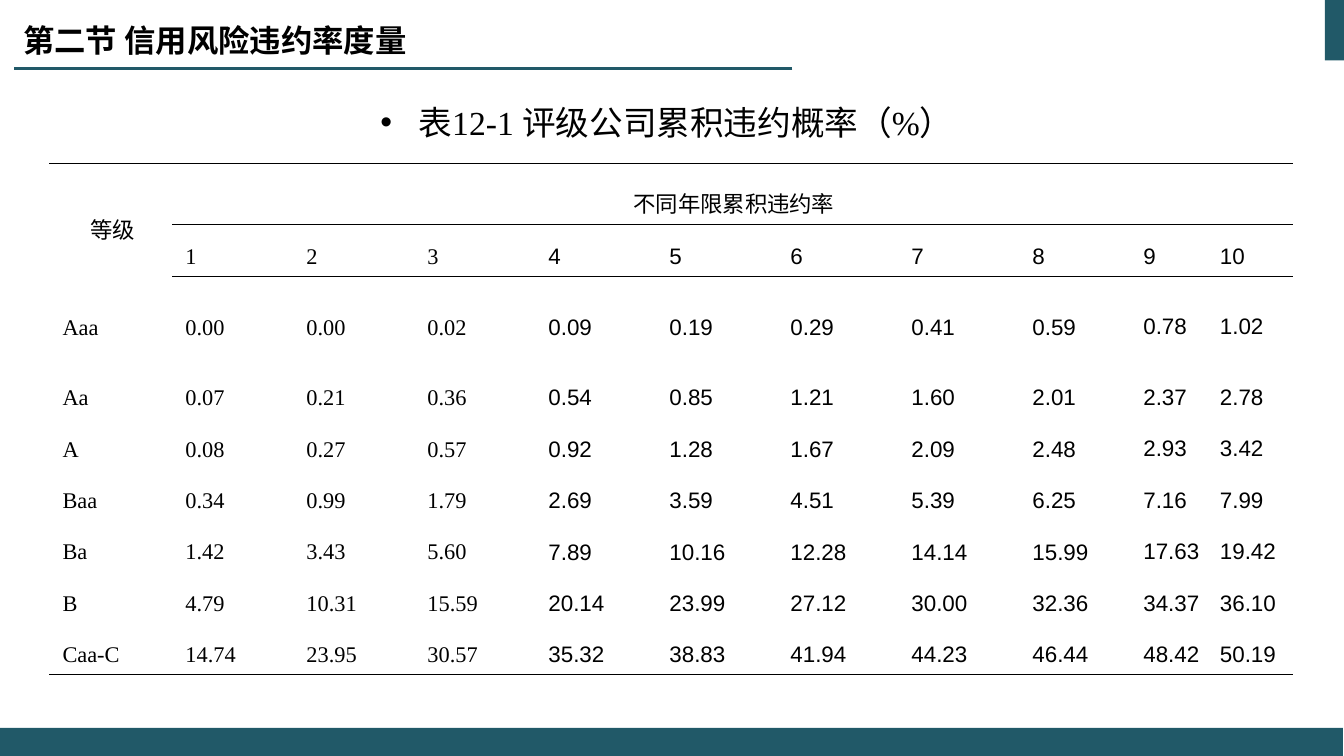
from dataclasses import dataclass

from lxml import etree
from pptx import Presentation
from pptx.dml.color import RGBColor
from pptx.enum.shapes import MSO_CONNECTOR, MSO_SHAPE
from pptx.enum.text import MSO_ANCHOR, PP_ALIGN
from pptx.oxml.ns import qn
from pptx.util import Inches, Pt

RECT, LINE = MSO_SHAPE.RECTANGLE, MSO_CONNECTOR.STRAIGHT
MIDDLE, TOP = MSO_ANCHOR.MIDDLE, MSO_ANCHOR.TOP
LEFT, CENTER = PP_ALIGN.LEFT, PP_ALIGN.CENTER

TEAL = RGBColor(0x21, 0x59, 0x68)
BLACK = RGBColor(0, 0, 0)
WHITE = RGBColor(255, 255, 255)

SANS, SERIF, ARIAL = "Noto Sans CJK SC", "Times New Roman", "Arial"

COLS = [1.22] + [1.2] * 8 + [0.76, 0.75]
ROWS = [0.61, 0.51, 0.89] + [0.51] * 6
YEARS = [str(year) for year in range(1, 11)]
RATES = {
    "Aaa": "0.00 0.00 0.02 0.09 0.19 0.29 0.41 0.59 0.78 1.02",
    "Aa": "0.07 0.21 0.36 0.54 0.85 1.21 1.60 2.01 2.37 2.78",
    "A": "0.08 0.27 0.57 0.92 1.28 1.67 2.09 2.48 2.93 3.42",
    "Baa": "0.34 0.99 1.79 2.69 3.59 4.51 5.39 6.25 7.16 7.99",
    "Ba": "1.42 3.43 5.60 7.89 10.16 12.28 14.14 15.99 17.63 19.42",
    "B": "4.79 10.31 15.59 20.14 23.99 27.12 30.00 32.36 34.37 36.10",
    "Caa-C": "14.74 23.95 30.57 35.32 38.83 41.94 44.23 46.44 48.42 50.19",
}
# First ruled column for each horizontal edge of the table
RULES = {0: 0, 1: 1, 2: 1, len(ROWS): 0}


@dataclass
class Bar:
    left: float
    top: float
    width: float
    height: float


@dataclass
class Style:
    font: str
    size: float
    bold: bool = False
    align: PP_ALIGN = LEFT
    space: float = 1.0
    margin: float = 0.0
    indent: float = 0.0
    bullet: str = ""


@dataclass
class Label:
    area: Bar
    anchor: MSO_ANCHOR
    text: str
    style: Style


BARS = [Bar(13.14, 0, 0.2, 0.6), Bar(0, 7.22, 13.32, 0.28)]
LABELS = [
    Label(Bar(0.13, -0.03, 8.31, 0.85), MIDDLE, "第二节 信用风险违约率度量",
          Style(SANS, 22.4, bold=True)),
    Label(Bar(0.11, 0.68, 13.01, 0.79), TOP, "表12-1 评级公司累积违约概率（%）",
          Style(SERIF, 24, align=CENTER, space=1.7, margin=0.38,
                indent=-0.38, bullet="•")),
]


def put(item, values: dict) -> None:
    """Set each named attribute of item."""
    for name, value in values.items():
        setattr(item, name, value)


def write(frame, text: str, style: Style) -> None:
    para = frame.paragraphs[0]
    props = para._p.get_or_add_pPr()
    props.set("marL", str(Inches(style.margin)))
    props.set("indent", str(Inches(style.indent)))
    if style.bullet:
        font = etree.SubElement(props, qn("a:buFont"))
        font.set("typeface", ARIAL)
        etree.SubElement(props, qn("a:buChar")).set("char", style.bullet)
    put(para, {"alignment": style.align, "line_spacing": style.space})
    run = para.add_run()
    run.text = text
    put(run.font, {"name": style.font, "size": Pt(style.size),
                   "bold": style.bold})
    run.font.color.rgb = BLACK
    east = etree.SubElement(run._r.get_or_add_rPr(), qn("a:ea"))
    east.set("typeface", SANS)


def box(area: Bar) -> list[int]:
    return [Inches(v) for v in (area.left, area.top, area.width, area.height)]


def draw_bar(slide, bar: Bar) -> None:
    shape = slide.shapes.add_shape(RECT, *box(bar))
    shape.shadow.inherit = False
    shape.fill.solid()
    shape.fill.fore_color.rgb = TEAL
    shape.line.fill.background()


def draw_rule(slide) -> None:
    rule = slide.shapes.add_connector(
        LINE, Inches(7.86), Inches(0.68), Inches(0.14), Inches(0.68))
    rule.line.color.rgb = TEAL
    rule.line.width = Pt(1.5)
    etree.SubElement(rule._element.spPr, qn("a:effectLst"))


def draw_label(slide, label: Label) -> None:
    frame = slide.shapes.add_textbox(*box(label.area)).text_frame
    put(frame, {"word_wrap": True, "vertical_anchor": label.anchor})
    write(frame, label.text, label.style)


def ruled(edge: int, col: int) -> bool:
    return edge in RULES and col >= RULES[edge]


def edge_cell(cell, row: int, col: int) -> None:
    """Draw the black rules of a cell and clear its other sides."""
    sides = {"L": False, "R": False,
             "T": ruled(row, col), "B": ruled(row + 1, col)}
    props = cell._tc.get_or_add_tcPr()
    for side, shown in sides.items():
        line = etree.SubElement(props, qn(f"a:ln{side}"))
        line.set("w", str(Pt(1)))
        if shown:
            fill = etree.SubElement(line, qn("a:solidFill"))
            etree.SubElement(fill, qn("a:srgbClr")).set("val", str(BLACK))
        else:
            etree.SubElement(line, qn("a:noFill"))


def draw_table(slide) -> None:
    area = Bar(0.49, 1.62, sum(COLS), sum(ROWS))
    table = slide.shapes.add_table(len(ROWS), len(COLS), *box(area)).table
    put(table, {"first_row": False, "horz_banding": False})
    for col, width in zip(table.columns, COLS):
        col.width = Inches(width)
    for row, height in zip(table.rows, ROWS):
        row.height = Inches(height)
    table.cell(0, 0).merge(table.cell(1, 0))
    table.cell(0, 1).merge(table.cell(0, len(COLS) - 1))

    texts = [["等级", "不同年限累积违约率"] + [""] * 9, [""] + YEARS]
    texts += [[grade, *rates.split()] for grade, rates in RATES.items()]
    for r, line in enumerate(texts):
        for c, text in enumerate(line):
            cell = table.cell(r, c)
            side, top = (0.1, 0.01) if c < 9 else (0, 0)
            put(cell, {"margin_left": Inches(side), "margin_right": Inches(side),
                       "margin_top": Inches(top), "margin_bottom": 0,
                       "vertical_anchor": MIDDLE})
            edge_cell(cell, r, c)
            cell.fill.solid()
            cell.fill.fore_color.rgb = WHITE
            if text:
                font = SANS if r == c == 0 else SERIF if c < 4 else ARIAL
                align = LEFT if r else CENTER
                write(cell.text_frame, text,
                      Style(font, 16, align=align, space=1.5, margin=0.03))


def main() -> None:
    deck = Presentation()
    put(deck, {"slide_width": Inches(13.33), "slide_height": Inches(7.5)})
    slide = deck.slides.add_slide(deck.slide_layouts[6])
    for bar in BARS:
        draw_bar(slide, bar)
    draw_rule(slide)
    for label in LABELS:
        draw_label(slide, label)
    draw_table(slide)
    deck.save("out.pptx")


if __name__ == "__main__":
    main()
